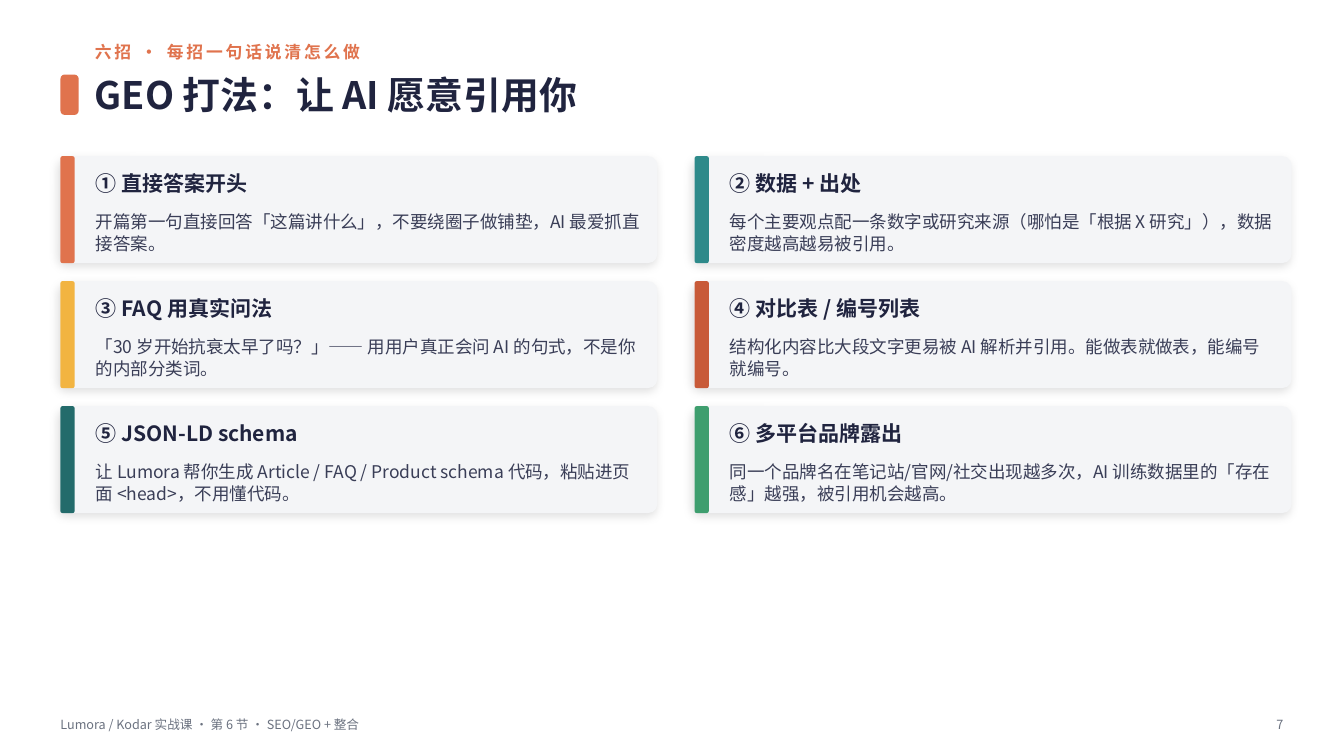
from lxml.etree import SubElement
from pptx import Presentation
from pptx.dml.color import RGBColor
from pptx.enum.shapes import MSO_SHAPE
from pptx.enum.text import MSO_ANCHOR, MSO_AUTO_SIZE, PP_ALIGN
from pptx.oxml.ns import qn
from pptx.util import Inches, Pt

FONT = "Noto Sans CJK SC"
ORANGE = RGBColor(0xE0, 0x73, 0x4D)
TEAL = RGBColor(0x2E, 0x8A, 0x8A)
YELLOW = RGBColor(0xF2, 0xB4, 0x41)
RUST = RGBColor(0xC8, 0x5A, 0x38)
DARK_TEAL = RGBColor(0x23, 0x6B, 0x6B)
GREEN = RGBColor(0x3E, 0x9E, 0x6E)
NAVY = RGBColor(0x20, 0x24, 0x3F)
BODY = RGBColor(0x3A, 0x3E, 0x57)
GREY = RGBColor(0x6B, 0x72, 0x80)
CARD = RGBColor(0xF4, 0xF5, 0xF7)

# Content
KICKER = "六招 · 每招一句话说清怎么做"
TITLE = "GEO 打法：让 AI 愿意引用你"
TIPS = [
    ("① 直接答案开头", ORANGE,
     "开篇第一句直接回答「这篇讲什么」，不要绕圈子做铺垫，AI 最爱抓直接答案。"),
    ("② 数据 + 出处", TEAL,
     "每个主要观点配一条数字或研究来源（哪怕是「根据 X 研究」），数据密度越高越易被引用。"),
    ("③ FAQ 用真实问法", YELLOW,
     "「30 岁开始抗衰太早了吗？」—— 用用户真正会问 AI 的句式，不是你的内部分类词。"),
    ("④ 对比表 / 编号列表", RUST,
     "结构化内容比大段文字更易被 AI 解析并引用。能做表就做表，能编号就编号。"),
    ("⑤ JSON-LD schema", DARK_TEAL,
     "让 Lumora 帮你生成 Article / FAQ / Product schema 代码，粘贴进页面 <head>，不用懂代码。"),
    ("⑥ 多平台品牌露出", GREEN,
     "同一个品牌名在笔记站/官网/社交出现越多次，AI 训练数据里的「存在感」越强，被引用机会越高。"),
]
FOOTER = "Lumora / Kodar 实战课 · 第 6 节 · SEO/GEO + 整合"
PAGE = "7"

# Layout, in inches
LEFT, TOP = 0.6, 1.55
CARD_W, CARD_H = 5.92, 1.06
STEP_X, STEP_Y = 6.29, 1.24
BAR_W = 0.14
TEXT_DX, TEXT_W = 0.35, 5.42

prs = Presentation()
prs.slide_width, prs.slide_height = Inches(13.33), Inches(7.5)
s = prs.slides.add_slide(prs.slide_layouts[5])


def add_text(text, x, y, w, h, *, size, color, bold=False, align=PP_ALIGN.LEFT,
             line=None, tracking=None, sp=None):
    sp = sp or s.shapes.add_textbox(0, 0, 0, 0)
    sp.left, sp.top, sp.width, sp.height = (Inches(v) for v in (x, y, w, h))
    tf = sp.text_frame
    tf.margin_left = tf.margin_right = tf.margin_top = tf.margin_bottom = 0
    tf.word_wrap, tf.auto_size = True, MSO_AUTO_SIZE.NONE
    tf.vertical_anchor = MSO_ANCHOR.MIDDLE
    p = tf.paragraphs[0]
    p.alignment = align
    if line:
        p.line_spacing = line
    r = p.add_run()
    r.text = text
    r.font.size, r.font.bold, r.font.name = Pt(size), bold, FONT
    r.font.color.rgb = color
    rpr = r.font._element
    SubElement(rpr, qn("a:ea"), typeface=FONT)
    if tracking:
        rpr.set("spc", str(tracking * 100))


def add_block(x, y, w, h, color, radius, shadow=False):
    sp = s.shapes.add_shape(MSO_SHAPE.ROUNDED_RECTANGLE,
                            Inches(x), Inches(y), Inches(w), Inches(h))
    sp.adjustments[0] = radius / min(w, h)
    sp.fill.solid()
    sp.fill.fore_color.rgb = color
    sp.line.fill.background()
    sp.shadow.inherit = False
    if shadow:
        effects = sp._element.spPr.find(qn("a:effectLst"))
        outer = SubElement(effects, qn("a:outerShdw"), blurRad=str(Pt(7)), dist=str(Pt(3)),
                           dir=str(135 * 60000), algn="bl", rotWithShape="0")
        black = SubElement(outer, qn("a:srgbClr"), val="000000")
        SubElement(black, qn("a:alpha"), val="12000")


# Header
add_text(KICKER, 0.94, 0.36, 11.79, 0.3, size=12, color=ORANGE, bold=True, tracking=2)
add_block(LEFT, 0.74, 0.18, 0.4, ORANGE, 0.04)
add_text(TITLE, 0.94, 0.64, 11.79, 0.6, size=27, color=NAVY, bold=True, sp=s.shapes.title)

# Cards, two per row
for i, (heading, color, body) in enumerate(TIPS):
    row, col = divmod(i, 2)
    x, y = LEFT + col * STEP_X, TOP + row * STEP_Y
    add_block(x, y, CARD_W, CARD_H, CARD, 0.09, shadow=True)
    add_block(x, y, BAR_W, CARD_H, color, 0.02)
    add_text(heading, x + TEXT_DX, y + 0.08, TEXT_W, 0.38, size=15, color=NAVY, bold=True)
    add_text(body, x + TEXT_DX, y + 0.5, TEXT_W, 0.5, size=12.5, color=BODY, line=1.05)

# Footer
add_text(FOOTER, LEFT, 7.04, 9, 0.3, size=9, color=GREY)
add_text(PAGE, 12.03, 7.04, 0.7, 0.3, size=9, color=GREY, align=PP_ALIGN.RIGHT)

prs.save("out.pptx")
